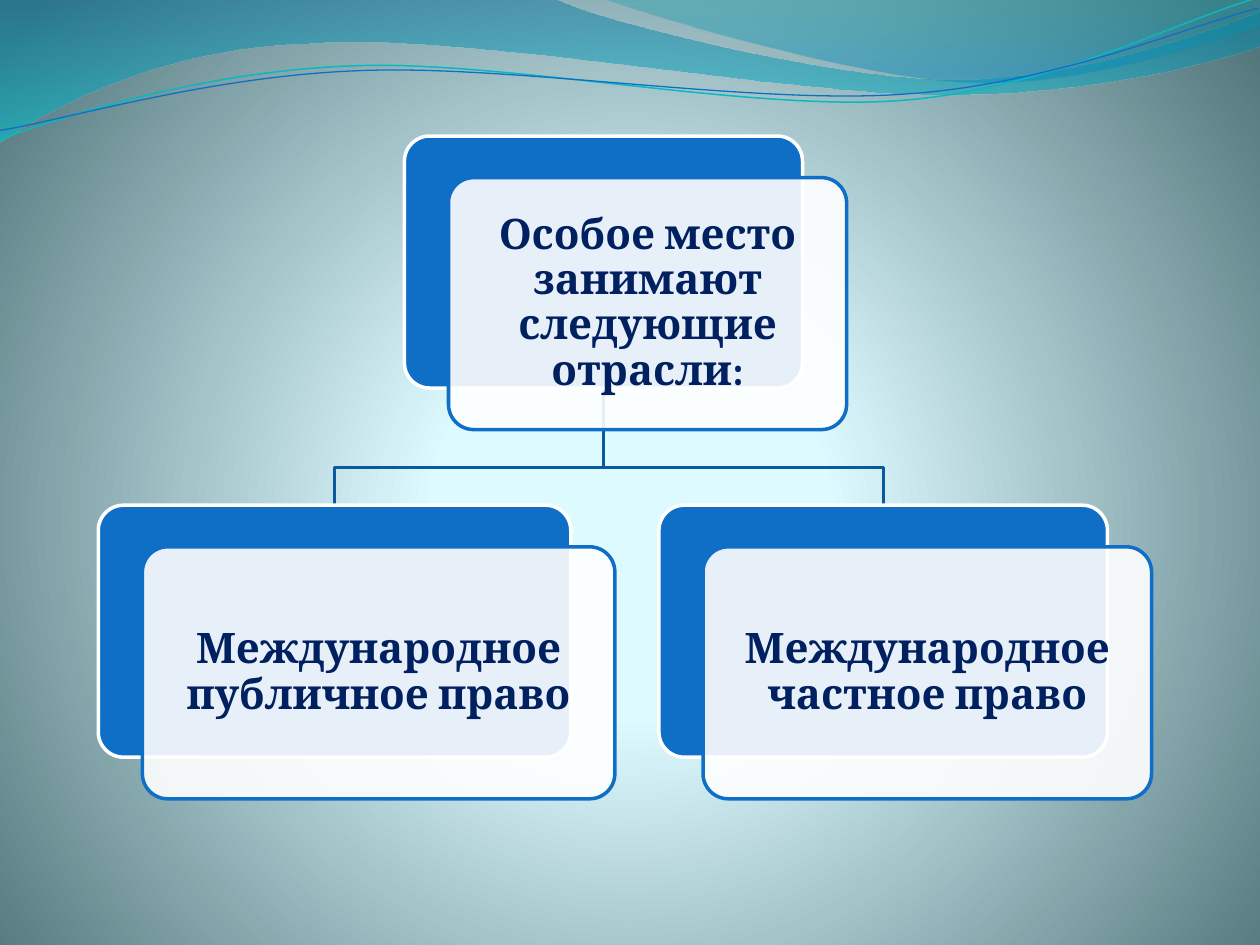
from lxml.etree import SubElement
from pptx import Presentation
from pptx.dml.color import RGBColor
from pptx.enum.shapes import MSO_SHAPE
from pptx.enum.text import MSO_ANCHOR, PP_ALIGN
from pptx.oxml.ns import qn
from pptx.util import Inches, Pt

BLUE = RGBColor(0x0F, 0x6F, 0xC6)
DARK_BLUE = RGBColor(0x0C, 0x59, 0x9F)
NAVY = RGBColor(0x00, 0x20, 0x60)
TURQUOISE = RGBColor(0x0A, 0xB8, 0xBF)
WHITE = RGBColor(0xFF, 0xFF, 0xFF)
SEA = RGBColor(0x00, 0x74, 0xA1)
AQUA = RGBColor(0x00, 0xC6, 0xCF)
TEAL = RGBColor(0x00, 0xA1, 0xA9)
AZURE = RGBColor(0x00, 0x8B, 0xBF)
ICE = RGBColor(0xDE, 0xFB, 0xFF)
PALE_ICE = RGBColor(0xDD, 0xFA, 0xFF)
SLATE = RGBColor(0x52, 0x76, 0x7C)

FONT = "Cambria"
CARD_HEIGHT = 2
CARD_OFFSET = 0.35, 0.33
STRAND_TILT = 357.3

WIDE_WAVE = [
    (0, 0), (4.4, -0.01),
    (4.76, 0.17, 6.64, 0.63, 7.58, 0.63), (8.53, 0.63, 9.58, 0.26, 10, 0.09),
    (10.01, 0.36),
    (9.83, 0.44, 8.7, 0.76, 7.46, 0.75), (6.22, 0.75, 3.82, 0.28, 2.57, 0.34),
    (1.29, 0.36, 0.46, 0.83, -0.01, 1.13), (0, 0),
]
RIGHT_WAVE = [
    (4.79, -0.01),
    (5.09, 0.11, 6.82, 0.62, 7.69, 0.65), (8.56, 0.69, 9.61, 0.32, 10, 0.21),
    (10, 0), (4.79, -0.01),
]
TURQUOISE_STRAND = [
    (-0.02, 0.87),
    (0.47, 0.72, 1.58, 0.41, 2.78, 0.42), (3.96, 0.42, 5.91, 0.93, 7.12, 0.9),
    (8.32, 0.87, 9.39, 0.36, 10, 0.22),
]
BLUE_STRAND = [
    (-0.02, 0.8),
    (0.46, 0.75, 1.64, 0.45, 2.83, 0.46), (4.03, 0.46, 5.96, 0.88, 7.16, 0.85),
    (8.35, 0.83, 9.42, 0.42, 10.01, 0.3),
]


def set_alpha(color_element, percent):
    SubElement(color_element, qn("a:alpha"), val=str(percent * 1000))


def set_gradient(properties, stops):
    solid = properties.find(qn("a:solidFill"))
    gradient = SubElement(properties, qn("a:gradFill"), rotWithShape="1")
    properties.replace(solid, gradient)
    stop_list = SubElement(gradient, qn("a:gsLst"))
    for position, color, opacity in stops:
        stop = SubElement(stop_list, qn("a:gs"), pos=str(position * 1000))
        color_element = SubElement(stop, qn("a:srgbClr"), val=str(color))
        if opacity < 100:
            set_alpha(color_element, opacity)
    return gradient


def paint_background(slide):
    slide.background.fill.solid()
    properties = slide.element.find(".//" + qn("p:bgPr"))
    gradient = set_gradient(
        properties, [(0, ICE, 100), (25, PALE_ICE, 100), (100, SLATE, 100)])
    circle = SubElement(gradient, qn("a:path"), path="circle")
    SubElement(circle, qn("a:fillToRect"),
               l="10000", t="110000", r="10000", b="100000")


def bend_segments(outline, segments):
    contour = outline.element.find(".//" + qn("a:path"))
    steps = iter(contour.findall(qn("a:lnTo")))
    for segment in segments:
        group = [next(steps) for _ in range(len(segment) // 2)]
        if len(group) == 3:
            curve = SubElement(contour, qn("a:cubicBezTo"))
            contour.replace(group[0], curve)
            for step in group:
                curve.append(step[0])
            for step in group[1:]:
                contour.remove(step)


def add_outline(slide, segments, close=False):
    start, *rest = [(Inches(x), Inches(y)) for segment in segments
                    for x, y in zip(segment[::2], segment[1::2])]
    builder = slide.shapes.build_freeform(*start)
    builder.add_line_segments(rest, close=close)
    outline = builder.convert_to_shape()
    outline.shadow.inherit = False
    bend_segments(outline, segments[1:])
    return outline


def add_wave(slide, segments, stops):
    wave = add_outline(slide, segments, close=True)
    wave.line.fill.background()
    wave.fill.solid()
    gradient = set_gradient(wave.element.spPr, stops)
    SubElement(gradient, qn("a:lin"), ang="5400000", scaled="0")


def add_strand(slide, segments, color, width, tilt=0):
    strand = add_outline(slide, segments)
    strand.rotation = tilt
    strand.fill.background()
    strand.line.color.rgb = color
    strand.line.width = Pt(width)


def add_branch(slide, parent, child):
    (x1, y1, width1), (x2, y2, width2) = parent, child
    start_x, end_x = x1 + width1 / 2, x2 + width2 / 2
    elbow_y = 3.71
    add_strand(slide, [(start_x, y1 + CARD_HEIGHT), (start_x, elbow_y),
                       (end_x, elbow_y), (end_x, y2)], DARK_BLUE, 2)


def add_panel(slide, left, top, width, fill, line):
    panel = slide.shapes.add_shape(
        MSO_SHAPE.ROUNDED_RECTANGLE,
        Inches(left), Inches(top), Inches(width), Inches(CARD_HEIGHT))
    panel.adjustments[0] = 0.1
    panel.shadow.inherit = False
    panel.fill.solid()
    panel.fill.fore_color.rgb = fill
    panel.line.color.rgb = line
    panel.line.width = Pt(2)
    return panel


def add_card(slide, place, text):
    left, top, width = place
    shift_x, shift_y = CARD_OFFSET
    add_panel(slide, left, top, width, BLUE, WHITE)
    card = add_panel(slide, left + shift_x, top + shift_y, width, WHITE, BLUE)
    set_alpha(card.element.spPr.find(qn("a:solidFill"))[0], 90)
    frame = card.text_frame
    frame.text = text
    frame.word_wrap = True
    frame.vertical_anchor = MSO_ANCHOR.MIDDLE
    frame.margin_left = frame.margin_right = Inches(0.1)
    frame.margin_top = frame.margin_bottom = Inches(0.1)
    paragraph = frame.paragraphs[0]
    paragraph.alignment = PP_ALIGN.CENTER
    paragraph.line_spacing = 0.9
    font = paragraph.runs[0].font
    font.name = FONT
    font.size = Pt(24)
    font.bold = True
    font.color.rgb = NAVY


def main():
    presentation = Presentation()
    presentation.slide_width = Inches(10)
    presentation.slide_height = Inches(7.5)
    slide = presentation.slides.add_slide(presentation.slide_layouts[6])

    paint_background(slide)
    add_wave(slide, WIDE_WAVE, [(0, SEA, 45), (100, AQUA, 55)])
    add_wave(slide, RIGHT_WAVE, [(0, TEAL, 30), (80, AZURE, 45)])
    add_strand(slide, TURQUOISE_STRAND, TURQUOISE, 0.85, STRAND_TILT)
    add_strand(slide, BLUE_STRAND, BLUE, 0.75, STRAND_TILT)

    heading = (3.21, 1.08, 3.16)
    public_law = (0.78, 4.01, 3.75)
    private_law = (5.23, 4.01, 3.56)
    for law in (private_law, public_law):
        add_branch(slide, heading, law)
    add_card(slide, heading, "Особое место занимают следующие отрасли:")
    add_card(slide, public_law, "Международное публичное право")
    add_card(slide, private_law, "Международное частное право")

    presentation.save("out.pptx")


if __name__ == "__main__":
    main()
